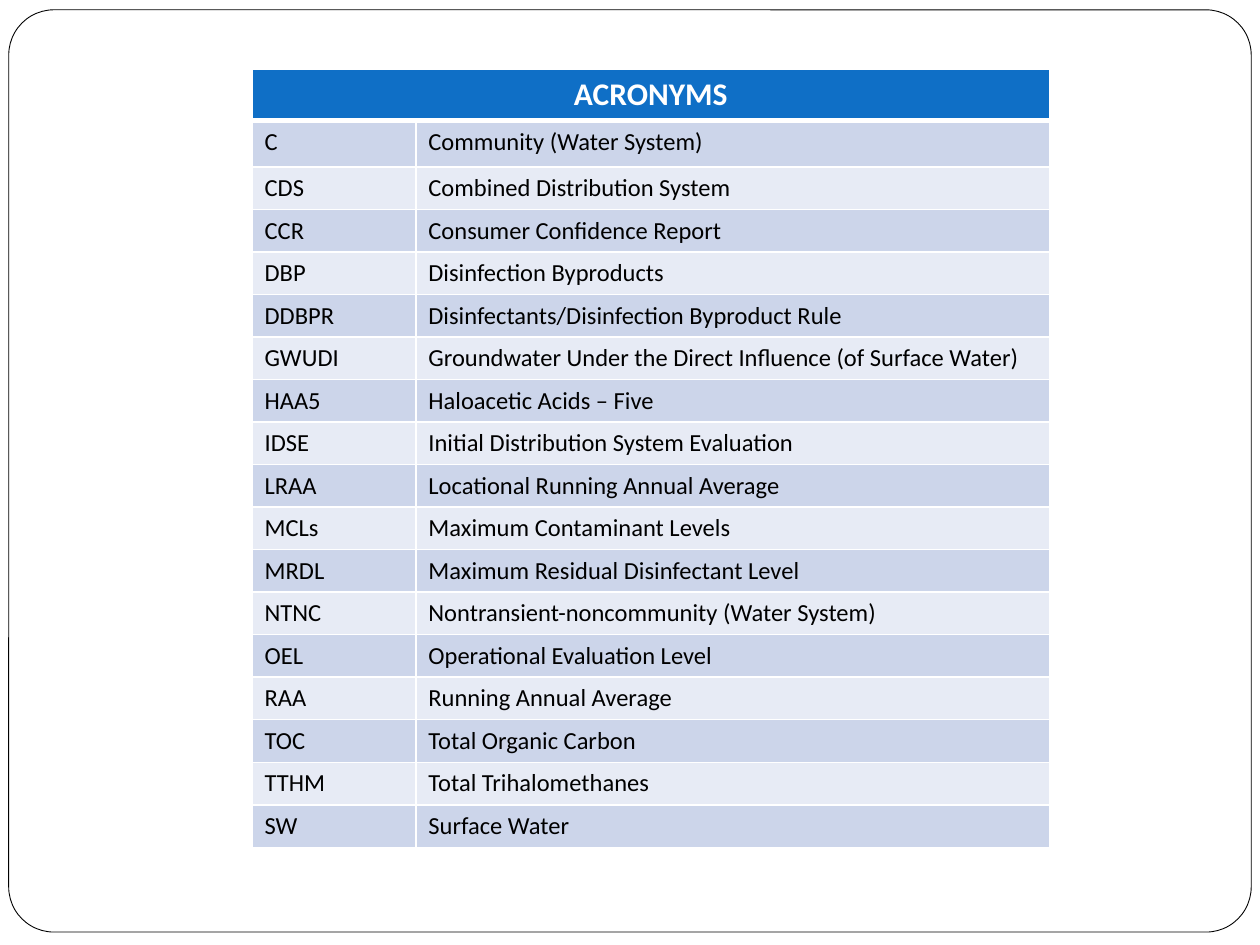
from dataclasses import dataclass
from typing import NamedTuple

from lxml.etree import SubElement
from pptx import Presentation
from pptx.dml.color import RGBColor
from pptx.enum.shapes import MSO_SHAPE
from pptx.enum.text import PP_ALIGN
from pptx.oxml.ns import qn
from pptx.util import Pt


@dataclass(frozen=True)
class Theme:
    font: str = "Calibri"
    header_size: float = 18
    body_size: float = 14
    black: str = "000000"
    white: str = "FFFFFF"
    header: str = "0F6FC6"
    bands: tuple = ("CCD5EA", "E7EBF5")
    thin_rule: float = 1
    thick_rule: float = 3


class Acronym(NamedTuple):
    short: str
    meaning: str


class CellStyle(NamedTuple):
    fill: str
    color: str
    size: float
    bold: bool = False
    align: PP_ALIGN = PP_ALIGN.LEFT
    top: float = 1
    bottom: float = 1


THEME = Theme()
TITLE = "ACRONYMS"
ACRONYMS = [
    Acronym("C", "Community (Water System)"),
    Acronym("CDS", "Combined Distribution System"),
    Acronym("CCR", "Consumer Confidence Report"),
    Acronym("DBP", "Disinfection Byproducts"),
    Acronym("DDBPR", "Disinfectants/Disinfection Byproduct Rule"),
    Acronym("GWUDI", "Groundwater Under the Direct Influence (of Surface Water)"),
    Acronym("HAA5", "Haloacetic Acids – Five"),
    Acronym("IDSE", "Initial Distribution System Evaluation"),
    Acronym("LRAA", "Locational Running Annual Average"),
    Acronym("MCLs", "Maximum Contaminant Levels"),
    Acronym("MRDL", "Maximum Residual Disinfectant Level"),
    Acronym("NTNC", "Nontransient-noncommunity (Water System)"),
    Acronym("OEL", "Operational Evaluation Level"),
    Acronym("RAA", "Running Annual Average"),
    Acronym("TOC", "Total Organic Carbon"),
    Acronym("TTHM", "Total Trihalomethanes"),
    Acronym("SW", "Surface Water"),
]
COLUMN_WIDTHS = (93.6, 362.2)
ROW_HEIGHTS = [29.3, 26.6] + [24.3] * (len(ACRONYMS) - 1)


def draw_frame(page) -> None:
    frame = page.shapes.add_shape(
        MSO_SHAPE.ROUNDED_RECTANGLE, Pt(5), Pt(5.6), Pt(710), Pt(527))
    frame.adjustments[0] = 0.049
    frame.shadow.inherit = False
    frame.fill.solid()
    frame.fill.fore_color.rgb = RGBColor.from_string(THEME.white)
    frame.line.color.rgb = RGBColor.from_string(THEME.black)
    frame.line.width = Pt(0.5)


def draw_borders(cell, style: CellStyle) -> None:
    properties = cell._tc.get_or_add_tcPr()
    widths = {"a:lnL": THEME.thin_rule, "a:lnR": THEME.thin_rule,
              "a:lnT": style.top, "a:lnB": style.bottom}
    for tag, width in widths.items():
        line = SubElement(properties, qn(tag), w=str(Pt(width)))
        fill = SubElement(line, qn("a:solidFill"))
        SubElement(fill, qn("a:srgbClr"), val=THEME.white)


def fill_cell(cell, text: str, style: CellStyle) -> None:
    draw_borders(cell, style)
    cell.fill.solid()
    cell.fill.fore_color.rgb = RGBColor.from_string(style.fill)
    para = cell.text_frame.paragraphs[0]
    para.alignment = style.align
    if not text:
        return
    span = para.add_run()
    span.text = text
    span.font.color.rgb = RGBColor.from_string(style.color)
    formats = {"name": THEME.font, "size": Pt(style.size), "bold": style.bold}
    for name, value in formats.items():
        setattr(span.font, name, value)


def draw_table(page) -> None:
    table = page.shapes.add_table(
        len(ROW_HEIGHTS), len(COLUMN_WIDTHS), Pt(144), Pt(39.6),
        Pt(sum(COLUMN_WIDTHS)), Pt(sum(ROW_HEIGHTS))).table
    for column, width in zip(table.columns, COLUMN_WIDTHS):
        column.width = Pt(width)
    for row, height in zip(table.rows, ROW_HEIGHTS):
        row.height = Pt(height)

    # Header across both columns
    header = CellStyle(THEME.header, THEME.white, THEME.header_size, True,
                       PP_ALIGN.CENTER, bottom=THEME.thick_rule)
    table.cell(0, 0).merge(table.cell(0, 1))
    for column, text in enumerate((TITLE, "")):
        fill_cell(table.cell(0, column), text, header)

    # Banded body rows
    for index, acronym in enumerate(ACRONYMS):
        top = THEME.thin_rule if index else THEME.thick_rule
        style = CellStyle(THEME.bands[index % 2], THEME.black,
                          THEME.body_size, top=top)
        for column, text in enumerate(acronym):
            fill_cell(table.cell(index + 1, column), text, style)


def main() -> None:
    deck = Presentation()
    deck.slide_width, deck.slide_height = Pt(720), Pt(540)
    page = deck.slides.add_slide(deck.slide_layouts[6])
    draw_frame(page)
    draw_table(page)
    deck.save("out.pptx")


if __name__ == "__main__":
    main()
